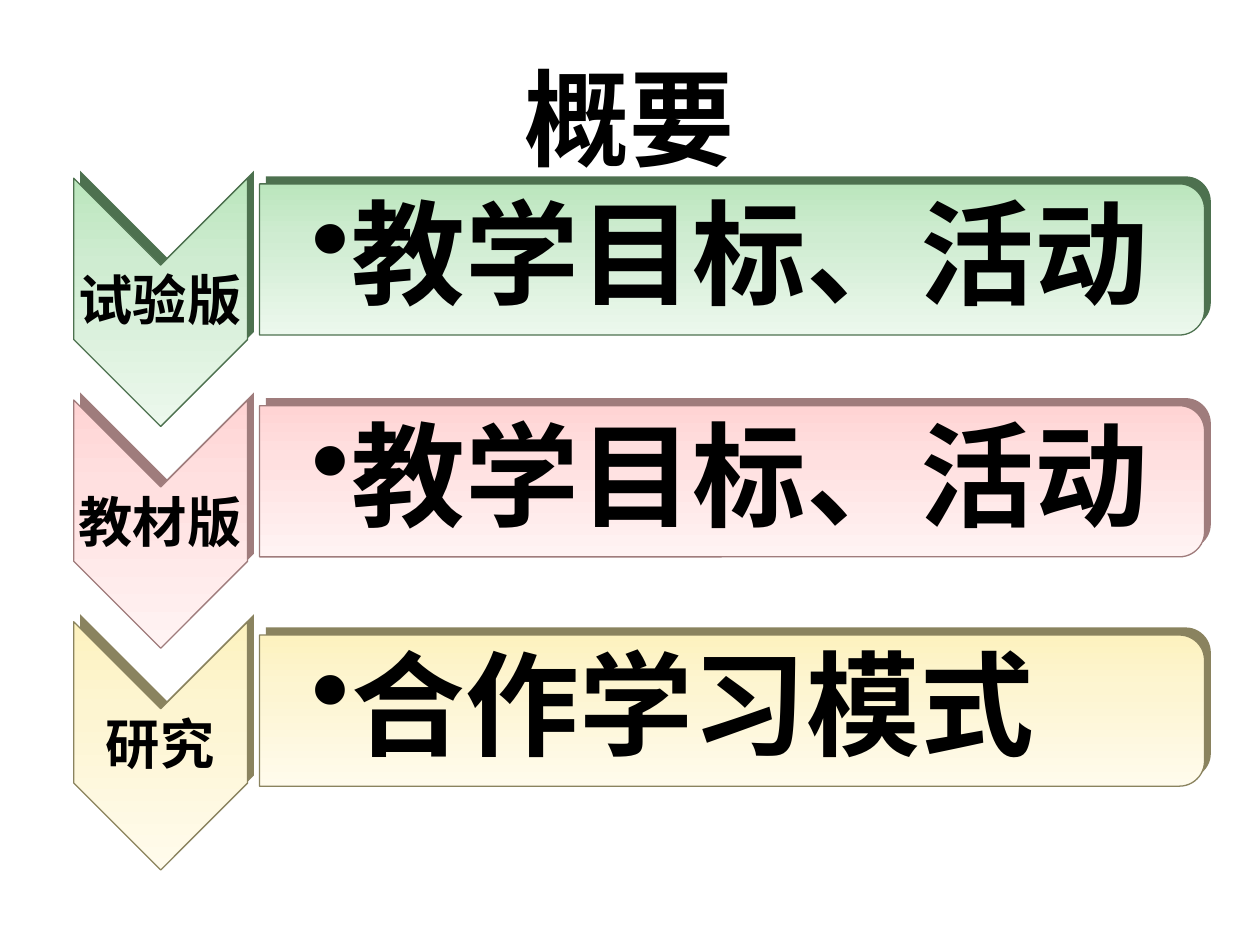
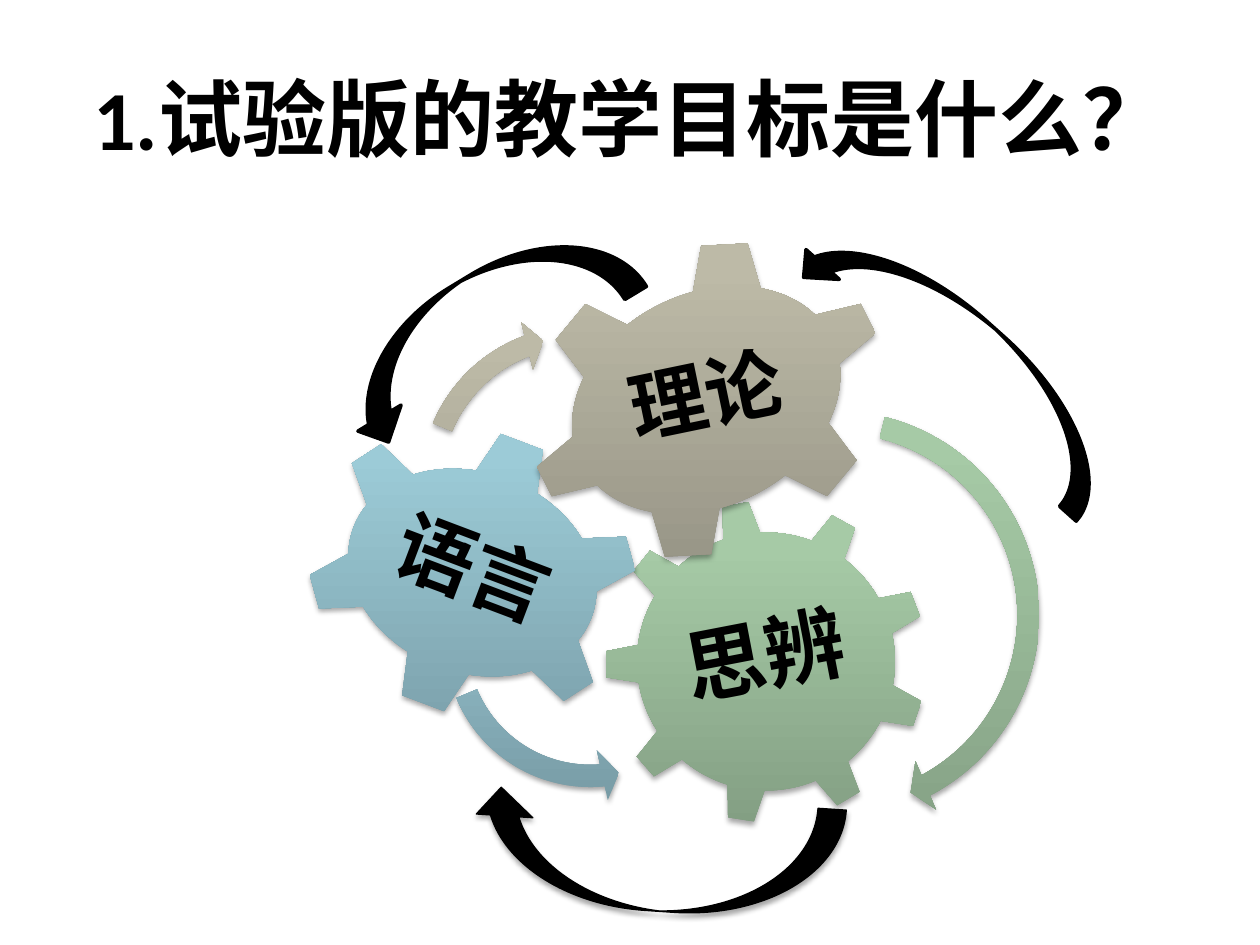
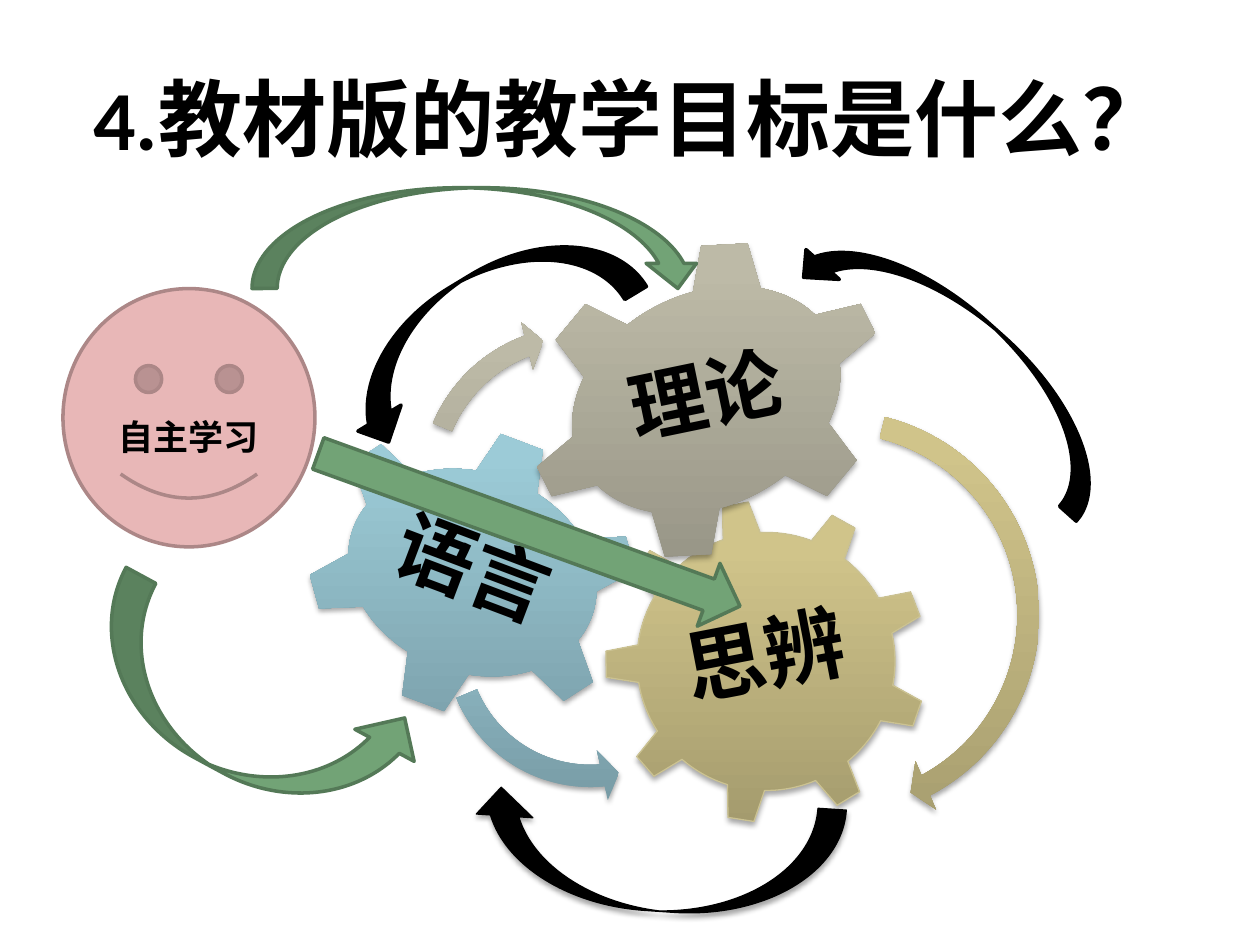
from lxml import etree
from pptx import Presentation
from pptx.dml.color import RGBColor
from pptx.enum.shapes import MSO_SHAPE
from pptx.enum.text import MSO_ANCHOR, PP_ALIGN
from pptx.oxml.ns import qn
from pptx.util import Inches, Pt

GEAR6, GEAR9 = MSO_SHAPE.GEAR_6, MSO_SHAPE.GEAR_9
TURN, BACK = MSO_SHAPE.CIRCULAR_ARROW, MSO_SHAPE.LEFT_CIRCULAR_ARROW
UP, DOWN = MSO_SHAPE.CURVED_UP_ARROW, MSO_SHAPE.CURVED_DOWN_ARROW
RIGHT, FACE = MSO_SHAPE.RIGHT_ARROW, MSO_SHAPE.SMILEY_FACE
CHEVRON, BAR = MSO_SHAPE.CHEVRON, MSO_SHAPE.ROUND_2_SAME_RECTANGLE
MIDDLE, CENTER, LEFT = MSO_ANCHOR.MIDDLE, PP_ALIGN.CENTER, PP_ALIGN.LEFT

COLORS = {
    "black": "000000", "arrow": "72A376", "rim": "547957",
    "face": "E8B7B7", "brow": "AC8787", "gold": "CBC292",
    "moss": "4D714F", "rose": "9F7C7C", "olive": "8A835F",
}
FADES = {
    "moss": ("BBE6BD", "CFECD1", "ECF8ED"),
    "rose": ("FFD4D4", "FFE0E0", "FFF3F3"),
    "olive": ("FDF2BF", "FDF5D1", "FFFBEC"),
    "green": ("809B80", "A6CAA6", "A7CBA7"),
    "blue": ("789CA6", "9CCBD7", "9CCCD9"),
    "gray": ("918F81", "BDBAA7", "BEBBA7"),
    "sand": ("A0976B", "D0C48A", "D2C68A"),
}


class Deck:
    font = "Calibri"

    def __init__(self):
        self.prs = Presentation()
        self.prs.slide_width = Inches(10)
        self.prs.slide_height = Inches(7.5)

    def page(self, title, size):
        self.slide = self.prs.slides.add_slide(self.prs.slide_layouts[6])
        self.text(title, (0.5, 0.3, 9, 1.25), size, space=1, pads=(0.1, 0.05))

    def apply(self, item, values):
        for name, value in values.items():
            setattr(item, name, value)

    def label(self, shape, text, size, align=CENTER, space=0.9, pads=(0.06, 0.06), left=None, top=None):
        side, edge = pads
        frame = shape.text_frame
        self.apply(frame, {
            "word_wrap": True, "vertical_anchor": MIDDLE,
            "margin_left": Inches(side if left is None else left),
            "margin_right": Inches(side),
            "margin_top": Inches(edge if top is None else top),
            "margin_bottom": Inches(edge),
        })
        line = frame.paragraphs[0]
        self.apply(line, {"alignment": align, "line_spacing": space})
        run = line.add_run()
        run.text = text
        self.apply(run.font, {"name": self.font, "size": Pt(size), "bold": True})
        run.font.color.rgb = RGBColor.from_string(COLORS["black"])
        return line

    def text(self, text, at, size, turn=0, vert=None, bullet=False, **look):
        box = self.slide.shapes.add_textbox(*map(Inches, at))
        box.rotation = turn
        line = self.label(box, text, size, **look)
        if vert:
            box.element.txBody.find(qn("a:bodyPr")).set("vert", vert)
        if bullet:
            props = line._p.get_or_add_pPr()
            props.set("marL", str(Inches(0.31)))
            props.set("indent", str(-Inches(0.31)))
            etree.SubElement(props, qn("a:buChar")).set("char", "•")

    def shape(self, kind, at, fill, turn=0, line=None, width=0.75, adj=(), shade=None):
        item = self.slide.shapes.add_shape(kind, *map(Inches, at))
        item.rotation = turn
        item.shadow.inherit = False
        for index, value in enumerate(adj):
            item.adjustments[index] = value
        if isinstance(fill, str):
            item.fill.solid()
            item.fill.fore_color.rgb = RGBColor.from_string(COLORS[fill])
        else:
            self.fade(item, *fill)
        if line:
            item.line.color.rgb = RGBColor.from_string(COLORS[line])
            item.line.width = Pt(width)
        else:
            item.line.fill.background()
        if shade:
            self.shade(item, shade)
        return item

    def fade(self, item, name, middle, angle):
        item.fill.gradient()
        grad = item.element.spPr.find(qn("a:gradFill"))
        grad.set("rotWithShape", "0")
        grad.find(qn("a:lin")).set("ang", str(angle * 60000))
        stops = grad.find(qn("a:gsLst"))
        for old in list(stops):
            stops.remove(old)
        for place, color in zip((0, middle, 100), FADES[name]):
            stop = etree.SubElement(stops, qn("a:gs"), pos=str(place * 1000))
            etree.SubElement(stop, qn("a:srgbClr"), val=color)

    def shade(self, item, alpha):
        effects = item.element.spPr.find(qn("a:effectLst"))
        drop = etree.SubElement(
            effects, qn("a:outerShdw"), blurRad=str(Pt(3.1)), dist=str(Pt(1.8)),
            dir="5400000", rotWithShape="0")
        color = etree.SubElement(drop, qn("a:srgbClr"), val=COLORS["black"])
        etree.SubElement(color, qn("a:alpha"), val=str(alpha * 1000))

    def block(self, kind, at, tone):
        x, y, w, h = at
        self.shape(kind, (x + 0.05, y - 0.06, w, h), tone, 90)
        self.shape(kind, at, (tone, 35, 90), 90, tone)

    def gears(self, mind, rim=None):
        parts = (
            (GEAR9, (4.8, 3.97, 2.56, 2.56), 349, mind, rim,
             "思辨", (5.31, 4.57, 1.53, 1.31), 46, 349, None),
            (GEAR6, (2.4, 3.41, 2.7, 2.27), 20.7, "blue", None,
             "语言", (3.03, 3.98, 1.43, 1.12), 45, 20.7, None),
            (GEAR6, (4.4, 1.7, 2.41, 2.95), 63.3, "gray", None,
             "理论", (4.9, 2.37, 1.42, 1.59), 44, 78.3, "vert270"),
        )
        for kind, at, turn, tone, line, word, spot, size, tilt, vert in parts:
            self.shape(kind, at, (tone, 80, 270), turn, line, shade=35)
            self.text(word, spot, size, tilt, vert)
        rings = (
            (TURN, (4.89, 3.14, 3.48, 3.48), 20, mind, (0.05, 2.99, 25.24, 158.45, 0.06)),
            (BACK, (3.42, 3.83, 2.53, 2.53), 270, "blue", (0.07, 4.3, 104.89, 148.38, 0.08)),
            (TURN, (3.23, 2.48, 2.73, 2.73), 27.6, "gray", (0.06, 3.94, 133.14, 105.08, 0.07)),
        )
        for kind, at, turn, tone, adj in rings:
            self.shape(kind, at, (tone, 80, 270), turn, adj=adj, shade=35)
        bends = (
            (UP, (2.52, 2.2, 2.59, 0.8), 148.9, 2, None),
            (UP, (6.09, 2.49, 3.08, 0.71), 221.8, 2, None),
            (DOWN, (3.72, 6.33, 2.97, 0.9), 183.8, 0.75, 35),
        )
        for kind, at, turn, width, shade in bends:
            self.shape(kind, at, "black", turn, "black", width, shade=shade)


def outline(deck):
    deck.page("概要", 60)
    rows = (
        ("试验版", "教学目标、活动", "moss", 1.48),
        ("教材版", "教学目标、活动", "rose", 3.24),
        ("研究", "合作学习模式", "olive", 5.06),
    )
    for index, (label, topic, tone, top) in enumerate(rows):
        drop = index * 1.76
        deck.block(CHEVRON, (0.29, 1.71 + drop, 1.97, 1.38), tone)
        deck.text(label, (0.58, 2.11 + drop, 1.38, 0.59), 31, pads=(0.02, 0.02))
        deck.block(BAR, (5.21, top - 3.17, 1.2, 7.5), tone)
        deck.text(topic, (1.96, top, 7.64, 1.16), 65, bullet=True,
                  align=LEFT, pads=(0.05, 0.05), left=0.51)


def trial(deck):
    deck.page("1.试验版的教学目标是什么？", 48)
    deck.gears("green")


def book(deck):
    deck.page("4.教材版的教学目标是什么？", 48)
    deck.gears("sand", "gold")
    face = deck.shape(FACE, (0.5, 2.29, 2, 2.05), "face", line="brow", width=2)
    deck.label(face, "自主学习", 20, space=1, pads=(0.1, 0.05), top=0.35)
    arrows = (
        (DOWN, (2, 1.49, 3.58, 0.8), 0),
        (UP, (0.58, 5.1, 2.78, 1.07), 28.4),
        (RIGHT, (2.42, 3.94, 3.56, 0.53), 19.9),
    )
    for kind, at, turn in arrows:
        deck.shape(kind, at, "arrow", turn, "rim", 2)


def main():
    deck = Deck()
    for build in (outline, trial, book):
        build(deck)
    deck.prs.save("out.pptx")


if __name__ == "__main__":
    main()
